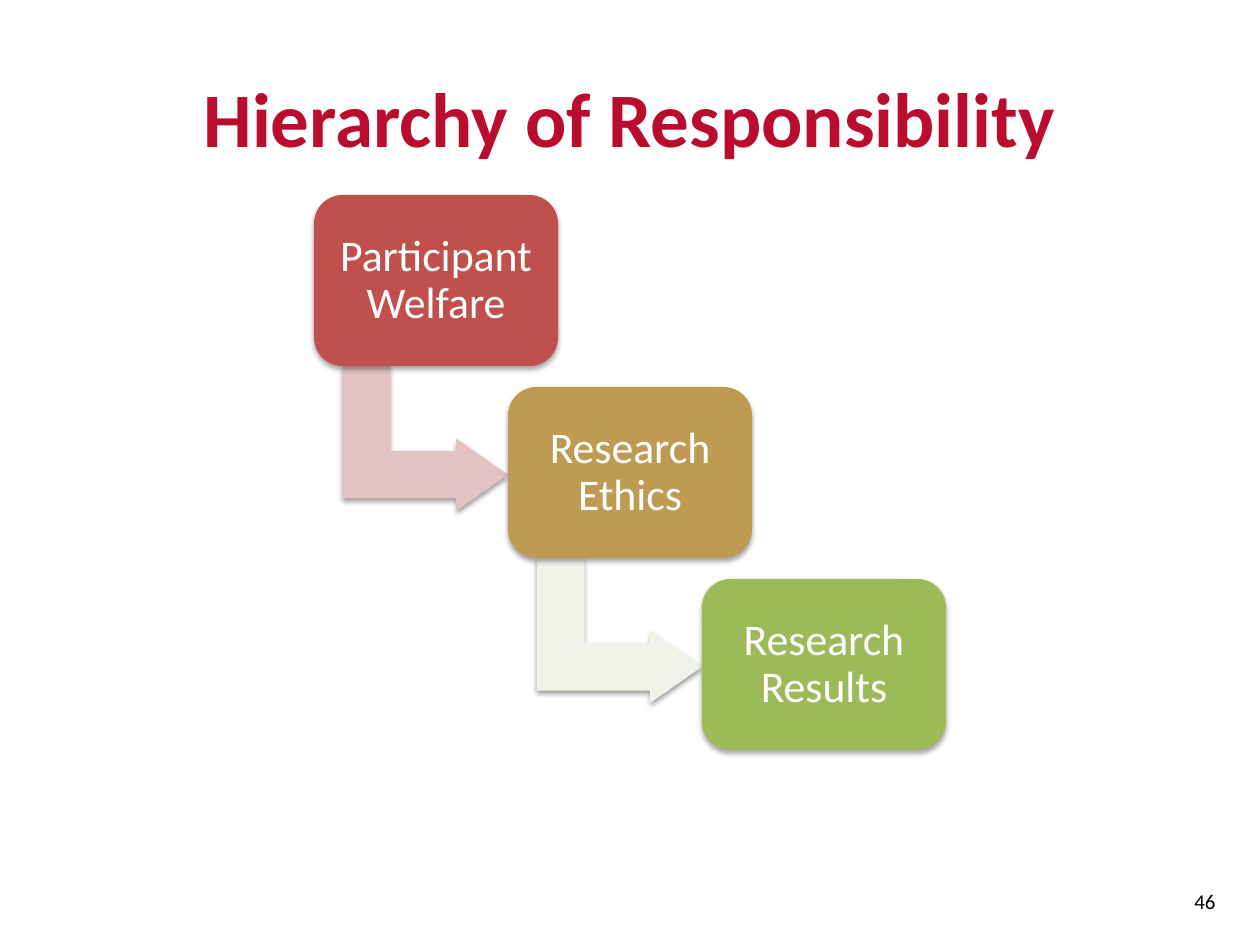
from dataclasses import dataclass

from lxml import etree
from pptx import Presentation
from pptx import util as u
from pptx.dml.color import RGBColor
from pptx.enum import shapes, text
from pptx.oxml.ns import qn

PX_PER_INCH = 126


@dataclass(frozen=True)
class Theme:
    font: str = "Calibri"
    title: str = "BA0C2F"
    number: str = "000000"
    on_fill: str = "FFFFFF"
    shadow: str = "000000"
    title_size: int = 44
    step_size: int = 25
    number_size: int = 12


@dataclass(frozen=True)
class Area:
    left: int
    top: int
    width: int
    height: int

    def emu(self) -> tuple:
        return tuple(px(n) for n in (self.left, self.top, self.width, self.height))

    def moved(self, right: int, down: int) -> "Area":
        return Area(self.left + right, self.top + down, self.width, self.height)


@dataclass(frozen=True)
class Step:
    label: str
    fill: str
    arrow_fill: str | None = None


THEME = Theme()
TITLE = Area(63, 38, 1134, 157)
NUMBER = Area(829, 876, 399, 50)
FIRST_BOX = Area(314, 195, 244, 171)
FIRST_ARROW = Area(353, 356, 145, 165)
STEP_RIGHT, STEP_DOWN = 194, 192
BOX_INSET = 12
STEPS = (
    Step("Participant Welfare", "C0504D", "E2C2C2"),
    Step("Research Ethics", "BD9B53", "EFF3EA"),
    Step("Research Results", "9BBB59"),
)


def px(length: int) -> int:
    return u.Inches(length / PX_PER_INCH)


def add_shadow(shape, distance: float, opacity: int) -> None:
    shape.shadow.inherit = False
    effects = shape._element.spPr.find(qn("a:effectLst"))
    shadow = etree.SubElement(
        effects, qn("a:outerShdw"), blurRad=str(u.Pt(3.1)), dist=str(u.Pt(distance)),
        dir="5400000", rotWithShape="0")
    color = etree.SubElement(shadow, qn("a:srgbClr"), val=THEME.shadow)
    etree.SubElement(color, qn("a:alpha"), val=str(opacity * 1000))


def write(shape, words: str, size: int, color: str, align, bold: bool = False):
    frame = shape.text_frame
    frame.word_wrap = True
    frame.vertical_anchor = text.MSO_ANCHOR.MIDDLE
    paragraph = frame.paragraphs[0]
    paragraph.alignment = align
    run = paragraph.add_run()
    run.text = words
    run.font.name = THEME.font
    run.font.size = u.Pt(size)
    run.font.bold = bold
    run.font.color.rgb = RGBColor.from_string(color)
    return paragraph


def add_filled(slide, kind, area: Area, fill: str, adjustments: tuple):
    shape = slide.shapes.add_shape(kind, *area.emu())
    for index, value in enumerate(adjustments):
        shape.adjustments[index] = value
    shape.fill.solid()
    shape.fill.fore_color.rgb = RGBColor.from_string(fill)
    shape.line.fill.background()
    return shape


def add_step(slide, step: Step, position: int) -> None:
    offset = position * STEP_RIGHT, position * STEP_DOWN
    if step.arrow_fill:
        arrow = add_filled(slide, shapes.MSO_SHAPE.BENT_UP_ARROW,
                           FIRST_ARROW.moved(*offset), step.arrow_fill,
                           (0.328, 0.25, 0.358))
        arrow.rotation = 90
        add_shadow(arrow, 1.6, 38)
    box = add_filled(slide, shapes.MSO_SHAPE.ROUNDED_RECTANGLE,
                     FIRST_BOX.moved(*offset), step.fill, (0.167,))
    add_shadow(box, 1.8, 35)
    frame = box.text_frame
    frame.margin_left = frame.margin_right = px(BOX_INSET)
    frame.margin_top = frame.margin_bottom = px(BOX_INSET)
    paragraph = write(box, step.label, THEME.step_size, THEME.on_fill,
                      text.PP_ALIGN.CENTER)
    paragraph.line_spacing = 0.9


def main() -> None:
    presentation = Presentation()
    presentation.slide_width = px(1260)
    presentation.slide_height = px(945)
    slide = presentation.slides.add_slide(presentation.slide_layouts[6])

    title = slide.shapes.add_textbox(*TITLE.emu())
    write(title, "Hierarchy of Responsibility", THEME.title_size, THEME.title,
          text.PP_ALIGN.CENTER, bold=True)
    for position, step in enumerate(STEPS):
        add_step(slide, step, position)
    number = slide.shapes.add_textbox(*NUMBER.emu())
    write(number, "46", THEME.number_size, THEME.number, text.PP_ALIGN.RIGHT)

    presentation.save("out.pptx")


if __name__ == "__main__":
    main()
